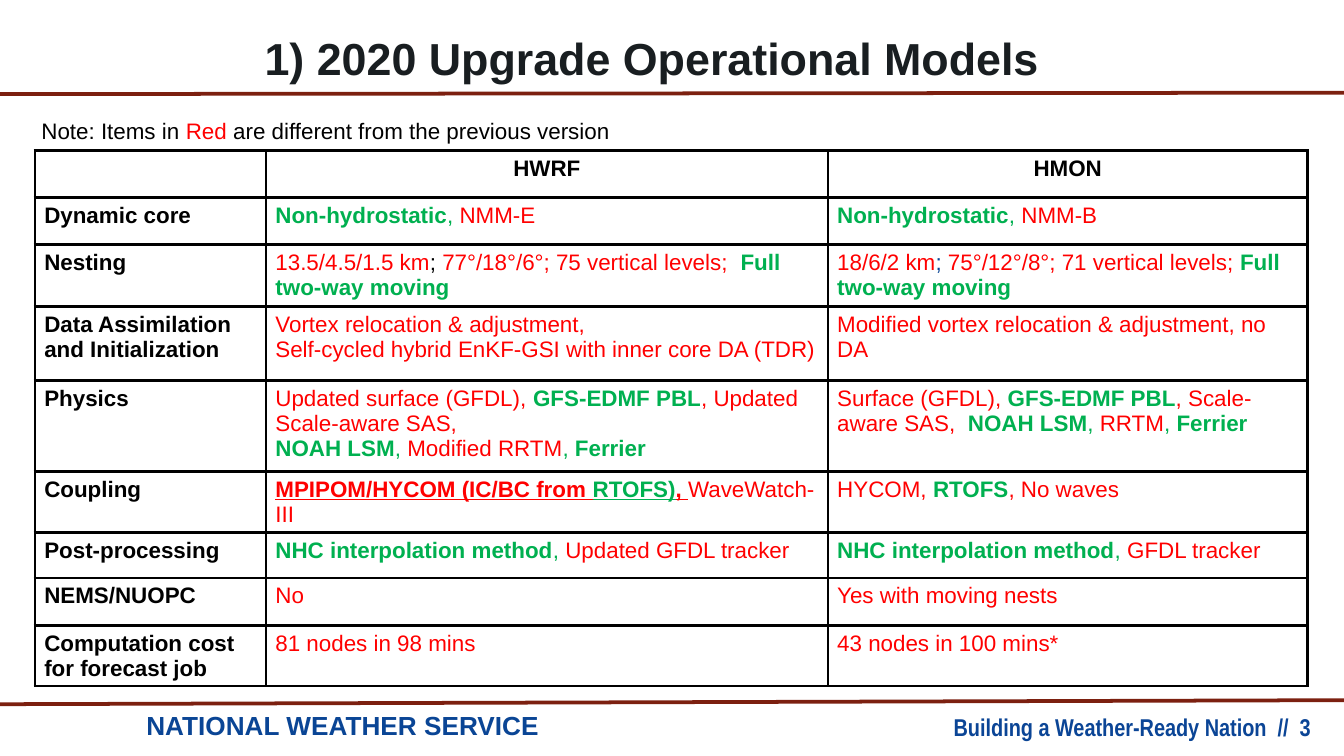
from dataclasses import dataclass

from lxml.etree import SubElement
from pptx import Presentation
from pptx.dml.color import RGBColor
from pptx.enum.shapes import MSO_CONNECTOR
from pptx.enum.text import MSO_ANCHOR, PP_ALIGN
from pptx.oxml.ns import qn
from pptx.slide import Slide
from pptx.table import _Cell
from pptx.text.text import TextFrame
from pptx.util import Inches, Pt

COLORS = {
    "black": "000000",
    "white": "FFFFFF",
    "red": "FF0000",
    "green": "00B050",
    "navy": "0A4595",
    "blue": "0B4596",
    "title": "191E21",
    "rule": "7C2010",
}
SLIDE_WIDTH = Inches(10)
SLIDE_HEIGHT = SLIDE_WIDTH * 9 // 16
GRID_COLUMNS = 1000
GRID_ROWS = GRID_COLUMNS * 9 / 16


@dataclass(frozen=True)
class Piece:
    text: str
    color: str = "black"
    bold: bool = False
    underline: bool = False


@dataclass(frozen=True)
class Area:
    column: int
    row: int
    columns: int
    rows: int


@dataclass(frozen=True)
class Caption:
    area: Area
    pieces: list[Piece]
    size: int
    font: str = "Arial"
    align: PP_ALIGN = PP_ALIGN.LEFT
    anchor: MSO_ANCHOR = MSO_ANCHOR.TOP
    insets: tuple[float, float] = (0.1, 0.1)


@dataclass(frozen=True)
class Rule:
    start_row: int
    end_row: int


@dataclass(frozen=True)
class Feature:
    name: str
    rows: int
    hwrf: list[list[Piece]]
    hmon: list[list[Piece]]


def across(columns: int) -> int:
    return round(SLIDE_WIDTH * columns / GRID_COLUMNS)


def down(rows: int) -> int:
    return round(SLIDE_HEIGHT * rows / GRID_ROWS)


def rgb(color: str) -> RGBColor:
    return RGBColor.from_string(COLORS[color])


def red(text: str) -> Piece:
    return Piece(text, "red")


def green(text: str) -> Piece:
    return Piece(text, "green", bold=True)


def heading(text: str) -> list[list[Piece]]:
    return [[Piece(text, bold=True)]]


COMMA = Piece(", ", "green")
RULES = [Rule(524, 521), Rule(70, 69)]
CAPTIONS = [
    Caption(Area(183, 530, 792, 13),
            [Piece("Building a Weather-Ready Nation  //  3", "blue", True)],
            13, "Arial Narrow", PP_ALIGN.RIGHT, insets=(0, 0)),
    Caption(Area(99, 518, 435, 51),
            [Piece("NATIONAL WEATHER SERVICE", "navy", True)], 14),
    Caption(Area(40, 10, 899, 65),
            [Piece("1) 2020 Upgrade Operational Models ", "title", True)],
            24, align=PP_ALIGN.CENTER, anchor=MSO_ANCHOR.MIDDLE),
    Caption(Area(21, 82, 488, 30),
            [Piece("Note: Items in "), red("Red"),
             Piece(" are different from the previous version")],
            12, insets=(0.1, 0.05)),
]

TABLE_COLUMN, TABLE_ROW = 26, 112
MODEL_COLUMNS = [172, 418, 357]
HEADER_ROWS = 35
FEATURES = [
    Feature("Dynamic core", 35,
            [[green("Non-hydrostatic"), COMMA, red("NMM-E")]],
            [[green("Non-hydrostatic"), Piece(",", "green"), red(" NMM-B")]]),
    Feature("Nesting", 46,
            [[red("13.5/4.5/1.5 km"), Piece("; "),
              red("77°/18°/6°; 75 vertical levels;  "), green("Full two-way moving")]],
            [[red("18/6/2 km"), Piece("; ", "navy"),
              red("75°/12°/8°; 71 vertical levels; "), green("Full two-way moving")]]),
    Feature("Data Assimilation and Initialization", 55,
            [[red("Vortex relocation & adjustment,")],
             [red("Self-cycled hybrid EnKF-GSI with inner core DA (TDR)")]],
            [[red("Modified vortex relocation & adjustment, no DA")]]),
    Feature("Physics", 68,
            [[red("Updated surface (GFDL), "), green("GFS-EDMF PBL"),
              red(", Updated Scale-aware SAS,")],
             [green("NOAH LSM"), COMMA, red("Modified RRTM"), COMMA, green("Ferrier")]],
            [[red("Surface (GFDL), "), green("GFS-EDMF PBL"),
              red(", Scale-aware SAS,  "), green("NOAH LSM"), COMMA,
              red("RRTM"), COMMA, green("Ferrier")]]),
    Feature("Coupling", 43,
            [[Piece("MPIPOM/HYCOM (IC/BC from ", "red", True, True),
              Piece("RTOFS)", "green", True, True),
              Piece(", ", "red", True, True), red("WaveWatch-III")]],
            [[red("HYCOM, "), green("RTOFS"), red(", No waves")]]),
    Feature("Post-processing", 34,
            [[green("NHC interpolation method"), COMMA, red("Updated GFDL tracker")]],
            [[green("NHC interpolation method"), COMMA, red("GFDL tracker")]]),
    Feature("NEMS/NUOPC", 35,
            [[red("No")]], [[red("Yes with moving nests")]]),
    Feature("Computation cost for forecast job", 45,
            [[red("81 nodes in 98 mins")]], [[red("43 nodes in 100 mins*")]]),
]


def write(frame: TextFrame, paragraphs: list[list[Piece]], size: int,
          font: str, align: PP_ALIGN) -> None:
    for index, pieces in enumerate(paragraphs):
        paragraph = frame.add_paragraph() if index else frame.paragraphs[0]
        paragraph.alignment = align
        for piece in pieces:
            run = paragraph.add_run()
            run.text = piece.text
            run.font.size = Pt(size)
            run.font.name = font
            run.font.bold = piece.bold
            run.font.underline = piece.underline
            run.font.color.rgb = rgb(piece.color)
        if not pieces:
            SubElement(paragraph._p, qn("a:endParaRPr"), sz=str(size * 100))


def draw_caption(slide: Slide, caption: Caption) -> None:
    area = caption.area
    frame = slide.shapes.add_textbox(across(area.column), down(area.row),
                                     across(area.columns), down(area.rows)).text_frame
    frame.word_wrap = True
    frame.vertical_anchor = caption.anchor
    frame.margin_left = frame.margin_right = Inches(caption.insets[0])
    frame.margin_top = frame.margin_bottom = Inches(caption.insets[1])
    write(frame, [caption.pieces], caption.size, caption.font, caption.align)


def draw_rule(slide: Slide, rule: Rule) -> None:
    line = slide.shapes.add_connector(MSO_CONNECTOR.STRAIGHT, 0, down(rule.start_row),
                                      SLIDE_WIDTH, down(rule.end_row))
    line.line.color.rgb = rgb("rule")
    line.line.width = Pt(2)
    SubElement(line._element.spPr, qn("a:effectLst"))


def fill_cell(cell: _Cell, paragraphs: list[list[Piece]], align: PP_ALIGN) -> None:
    cell.margin_left = cell.margin_right = Inches(0.07)
    cell.margin_top = cell.margin_bottom = Inches(0.04)
    properties = cell._tc.get_or_add_tcPr()
    for side in ("a:lnL", "a:lnR", "a:lnT", "a:lnB"):
        border = SubElement(properties, qn(side), w=str(Pt(1.5)))
        SubElement(SubElement(border, qn("a:solidFill")), qn("a:srgbClr"), val=COLORS["black"])
    cell.fill.solid()
    cell.fill.fore_color.rgb = rgb("white")
    write(cell.text_frame, paragraphs, 12, "Arial", align)


def draw_comparison(slide: Slide) -> None:
    heights = [HEADER_ROWS] + [feature.rows for feature in FEATURES]
    table = slide.shapes.add_table(
        len(heights), len(MODEL_COLUMNS), across(TABLE_COLUMN), down(TABLE_ROW),
        across(sum(MODEL_COLUMNS)), down(sum(heights))).table
    table.first_row = table.horz_banding = False
    for column, columns in zip(table.columns, MODEL_COLUMNS):
        column.width = across(columns)
    contents = [[[[]], heading("HWRF"), heading("HMON")]]
    contents += [[heading(item.name), item.hwrf, item.hmon] for item in FEATURES]
    for index, (row, rows, content) in enumerate(zip(table.rows, heights, contents)):
        row.height = down(rows)
        for cell, paragraphs in zip(row.cells, content):
            fill_cell(cell, paragraphs, PP_ALIGN.LEFT if index else PP_ALIGN.CENTER)


def main() -> None:
    presentation = Presentation()
    presentation.slide_width, presentation.slide_height = SLIDE_WIDTH, SLIDE_HEIGHT
    slide = presentation.slides.add_slide(presentation.slide_layouts[6])
    for rule in RULES:
        draw_rule(slide, rule)
    draw_comparison(slide)
    for caption in CAPTIONS:
        draw_caption(slide, caption)
    presentation.save("out.pptx")


if __name__ == "__main__":
    main()
